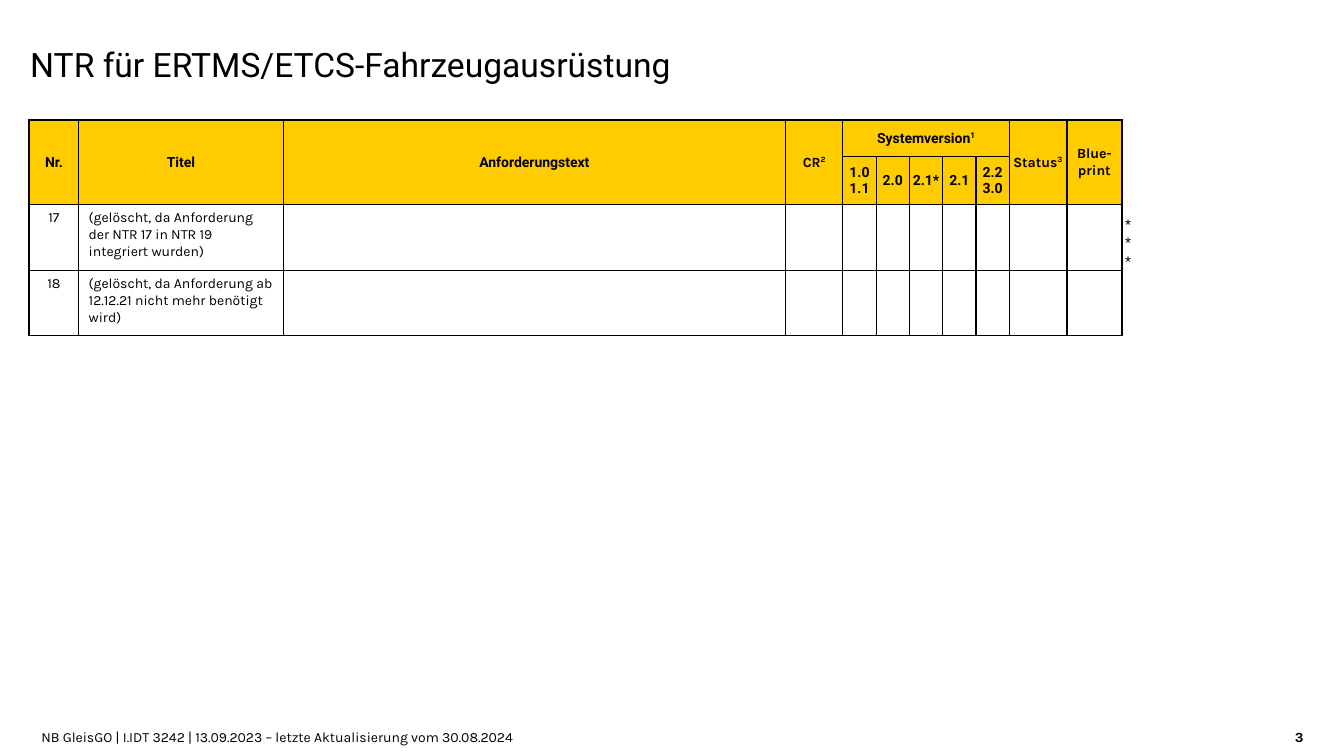
import pptx
import pptx.util
import pptx.dml.color
import pptx.enum.text
import pptx.oxml
import pptx.oxml.ns

Inches = pptx.util.Inches
Pt = pptx.util.Pt
ALIGN = pptx.enum.text.PP_ALIGN
ANCHOR = pptx.enum.text.MSO_ANCHOR
COLORS = {"text": "000000", "header": "FFCC00", "cell": "FFFFFF", "border": "000000"}


def style_runs(paragraph, font_name, size, bold=False):
    for run in paragraph.runs:
        run.font.name = font_name
        run.font.size = Pt(size)
        run.font.bold = bold
        run.font.color.rgb = pptx.dml.color.RGBColor.from_string(COLORS["text"])


def add_text(slide, box, text, font_name, size, anchor=ANCHOR.TOP, align=ALIGN.LEFT, bold=False):
    shape = slide.shapes.add_textbox(*[Inches(value) for value in box])
    frame = shape.text_frame
    frame.word_wrap = True
    frame.margin_left = frame.margin_right = frame.margin_top = frame.margin_bottom = 0
    frame.vertical_anchor = anchor
    frame.text = text
    for paragraph in frame.paragraphs:
        paragraph.alignment = align
        style_runs(paragraph, font_name, size, bold)


presentation = pptx.Presentation()
presentation.slide_width = Inches(13.33)
presentation.slide_height = Inches(7.5)
slide = presentation.slides.add_slide(presentation.slide_layouts[6])

# Footer, page number and title
add_text(slide, (0.41, 7.15, 11.6, 0.24),
         "NB GleisGO | I.IDT 3242 | 13.09.2023 – letzte Aktualisierung vom 30.08.2024",
         "Karla", 10, ANCHOR.BOTTOM)
add_text(slide, (12.36, 7.15, 0.57, 0.24), "3", "Karla", 10, ANCHOR.BOTTOM, ALIGN.RIGHT, True)
add_text(slide, (0.3, 0.44, 10.32, 0.71), "NTR für ERTMS/ETCS-Fahrzeugausrüstung", "Roboto", 24)

# Table grid
column_widths = [0.49, 2.03, 4.98, 0.57] + [0.33] * 5 + [0.57, 0.55]
row_heights = [0.36, 0.48, 0.65, 0.65]
table = slide.shapes.add_table(
    len(row_heights), len(column_widths), Inches(0.29), Inches(1.19),
    Inches(sum(column_widths)), Inches(sum(row_heights))).table
table.first_row = False
table.horz_banding = False
for column, width in zip(table.columns, column_widths):
    column.width = Inches(width)
for row, height in zip(table.rows, row_heights):
    row.height = Inches(height)

# Fills, margins and borders
VERSION_COLUMN, STATUS_COLUMN, BLUEPRINT_COLUMN = 4, 9, 10
for row_index in range(len(row_heights)):
    for column_index in range(len(column_widths)):
        cell = table.cell(row_index, column_index)
        is_header = row_index < 2
        if is_header or column_index > VERSION_COLUMN:
            cell.fill.solid()
            cell.fill.fore_color.rgb = pptx.dml.color.RGBColor.from_string(
                COLORS["header" if is_header else "cell"])
        else:
            cell.fill.background()
        side_margin = 0.1 if column_index < VERSION_COLUMN else 0.01
        cell.margin_left = cell.margin_right = Inches(side_margin)
        cell.margin_top = cell.margin_bottom = Inches(0.05)
        cell.vertical_anchor = ANCHOR.MIDDLE if is_header else ANCHOR.TOP
        heavy = {
            "lnL": column_index in (0, BLUEPRINT_COLUMN),
            "lnR": column_index in (STATUS_COLUMN, BLUEPRINT_COLUMN),
            "lnT": row_index == 0,
            "lnB": False,
        }
        properties = cell._tc.get_or_add_tcPr()
        for position, (side, is_heavy) in enumerate(heavy.items()):
            properties.insert(position, pptx.oxml.parse_xml(
                f'<a:{side} {pptx.oxml.ns.nsdecls("a")} w="{Pt(1.5 if is_heavy else 1)}">'
                f'<a:solidFill><a:srgbClr val="{COLORS["border"]}"/></a:solidFill></a:{side}>'))

# Merged header cells
for column_index in (0, 1, 2, 3, STATUS_COLUMN, BLUEPRINT_COLUMN):
    table.cell(0, column_index).merge(table.cell(1, column_index))
table.cell(0, VERSION_COLUMN).merge(table.cell(0, STATUS_COLUMN - 1))

# Cell text: row, column, text, superscript, font
cell_texts = [
    (0, 0, "Nr.", "", "Roboto"),
    (0, 1, "Titel", "", "Roboto"),
    (0, 2, "Anforderungstext", "", "Roboto"),
    (0, 3, "CR", "2", "Karla"),
    (0, VERSION_COLUMN, "Systemversion", "1", "Roboto"),
    (0, STATUS_COLUMN, "Status", "3", "Karla"),
    (0, BLUEPRINT_COLUMN, "Blue-print", "", "Karla"),
    (2, 0, "17", "", "Karla"),
    (2, 1, "(gelöscht, da Anforderung der NTR 17 in NTR 19 integriert wurden)", "", "Karla"),
    (3, 0, "18", "", "Karla"),
    (3, 1, "(gelöscht, da Anforderung ab 12.12.21 nicht mehr benötigt wird)", "", "Karla"),
]
versions = ["1.0\n1.1", "2.0", "2.1*", "2.1", "2.2 3.0"]
for offset, version in enumerate(versions):
    cell_texts.append((1, VERSION_COLUMN + offset, version, "", "Roboto"))

for row_index, column_index, text, superscript, font_name in cell_texts:
    frame = table.cell(row_index, column_index).text_frame
    frame.text = text
    if superscript:
        run = frame.paragraphs[0].add_run()
        run.text = superscript
        run.font._element.set("baseline", "30000")
    is_header = row_index < 2
    for paragraph in frame.paragraphs:
        paragraph.alignment = ALIGN.CENTER if is_header or column_index == 0 else ALIGN.LEFT
        paragraph.line_spacing = Pt(12)
        style_runs(paragraph, font_name, 10, is_header)

# Change marks beside the table
add_text(slide, (11.16, 2.13, 0.12, 0.54), "*\n*\n*", "Arial", 11)

presentation.save("out.pptx")
